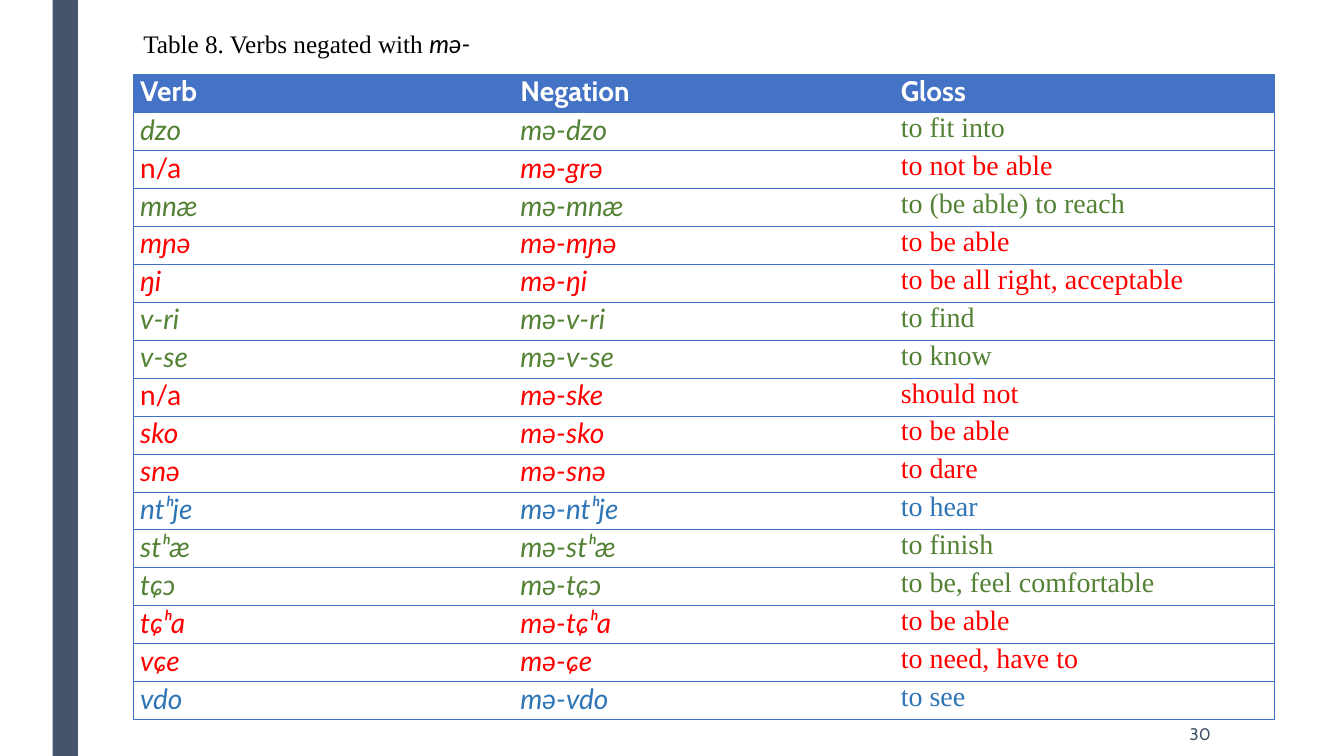
"""Builds a slide with a table of verbs and their negated forms."""
from dataclasses import dataclass

from lxml.etree import SubElement
from pptx import Presentation
from pptx.dml.color import RGBColor
from pptx.enum.shapes import MSO_SHAPE as Preset
from pptx.enum.text import MSO_ANCHOR as Anchor, MSO_AUTO_SIZE as AutoSize, PP_ALIGN as Align
from pptx.oxml.ns import qn
from pptx.slide import Slide
from pptx.table import _Cell as Cell
from pptx.text.text import _Paragraph as Paragraph
from pptx.util import Pt

WHITE = RGBColor(0xFF, 0xFF, 0xFF)
BLACK = RGBColor(0, 0, 0)
SLATE = RGBColor(0x44, 0x54, 0x6A)
HEADER_BLUE = RGBColor(0x44, 0x72, 0xC4)
GREEN = RGBColor(0x54, 0x82, 0x35)
RED = RGBColor(0xFF, 0, 0)
BLUE = RGBColor(0x2E, 0x75, 0xB6)

HEADING_FONT = "Cabin"
PHONETIC_FONT = "Lato"
GLOSS_FONT = "Times New Roman"

TABLE_LEFT, TABLE_TOP = 95.2, 53.2
COLUMN_WIDTH, ROW_HEIGHT = 271.7, 27.12
CELL_MARGIN = 4.9
BORDER_WIDTH = 0.5


@dataclass(frozen=True)
class Style:
    font: str
    size: float
    color: RGBColor
    bold: bool = False
    italic: bool = False


@dataclass(frozen=True)
class Verb:
    form: str
    negation: str
    gloss: str
    color: RGBColor


HEADINGS = ("Verb", "Negation", "Gloss")
VERBS = (
    Verb("dzo", "mə-dzo", "to fit into", GREEN),
    Verb("n/a", "mə-grə", "to not be able", RED),
    Verb("mnæ", "mə-mnæ", "to (be able) to reach", GREEN),
    Verb("mɲə", "mə-mɲə", "to be able", RED),
    Verb("ŋi", "mə-ŋi", "to be all right, acceptable", RED),
    Verb("v-ri", "mə-v-ri", "to find", GREEN),
    Verb("v-se", "mə-v-se", "to know", GREEN),
    Verb("n/a", "mə-ske", "should not", RED),
    Verb("sko", "mə-sko", "to be able", RED),
    Verb("snə", "mə-snə", "to dare", RED),
    Verb("ntʰje", "mə-ntʰje", "to hear", BLUE),
    Verb("stʰæ", "mə-stʰæ", "to finish", GREEN),
    Verb("tɕɔ", "mə-tɕɔ", "to be, feel comfortable", GREEN),
    Verb("tɕʰa", "mə-tɕʰa", "to be able", RED),
    Verb("vɕe", "mə-ɕe", "to need, have to", RED),
    Verb("vdo", "mə-vdo", "to see", BLUE),
)


def add_span(para: Paragraph, text: str, style: Style) -> None:
    span = para.add_run()
    span.text = text
    span.font.name = style.font
    span.font.size = Pt(style.size)
    span.font.bold = style.bold
    span.font.italic = style.italic
    span.font.color.rgb = style.color


def set_borders(cell: Cell, column: int) -> None:
    visible = {"L": column == 0, "R": column == len(HEADINGS) - 1, "T": True, "B": True}
    properties = cell._tc.get_or_add_tcPr()
    for side, shown in visible.items():
        line = SubElement(properties, qn(f"a:ln{side}"), w=str(Pt(BORDER_WIDTH)))
        if shown:
            fill = SubElement(line, qn("a:solidFill"))
            SubElement(fill, qn("a:srgbClr"), val=str(HEADER_BLUE))
        else:
            SubElement(line, qn("a:noFill"))


def fill_cell(cell: Cell, column: int, text: str, style: Style) -> None:
    cell.margin_left = cell.margin_right = Pt(CELL_MARGIN)
    cell.margin_top = cell.margin_bottom = Pt(0)
    set_borders(cell, column)
    para = cell.text_frame.paragraphs[0]
    para.alignment = Align.JUSTIFY
    add_span(para, text, style)


def add_verb_table(page: Slide) -> None:
    row_count, column_count = len(VERBS) + 1, len(HEADINGS)
    table = page.shapes.add_table(
        row_count, column_count, Pt(TABLE_LEFT), Pt(TABLE_TOP),
        Pt(COLUMN_WIDTH * column_count), Pt(ROW_HEIGHT * row_count)).table
    table.horz_banding = False
    for column in table.columns:
        column.width = Pt(COLUMN_WIDTH)
    for row in table.rows:
        row.height = Pt(ROW_HEIGHT)

    for column, heading in enumerate(HEADINGS):
        cell = table.cell(0, column)
        fill_cell(cell, column, heading, Style(HEADING_FONT, 20, WHITE, bold=True))
        cell.fill.solid()
        cell.fill.fore_color.rgb = HEADER_BLUE

    for row, verb in enumerate(VERBS, start=1):
        entries = (
            (verb.form, Style(PHONETIC_FONT, 20, verb.color, italic=verb.form != "n/a")),
            (verb.negation, Style(PHONETIC_FONT, 20, verb.color, italic=True)),
            (verb.gloss, Style(GLOSS_FONT, 20, verb.color)),
        )
        for column, (text, style) in enumerate(entries):
            cell = table.cell(row, column)
            fill_cell(cell, column, text, style)
            cell.fill.background()


def add_side_bar(page: Slide) -> None:
    bar = page.shapes.add_shape(Preset.RECTANGLE, Pt(37.6), Pt(0), Pt(18), Pt(540))
    bar.shadow.inherit = False
    bar.fill.solid()
    bar.fill.fore_color.rgb = SLATE
    bar.line.fill.background()


def set_caption(page: Slide) -> None:
    title = page.shapes.title
    title.left, title.top, title.width, title.height = Pt(95.2), Pt(16.8), Pt(248.5), Pt(29)
    frame = title.text_frame
    frame.word_wrap = False
    frame.auto_size = AutoSize.NONE
    frame.vertical_anchor = Anchor.TOP
    para = frame.paragraphs[0]
    para.alignment = Align.LEFT
    para.line_spacing = 1.0
    para.space_before = Pt(0)
    add_span(para, "Table 8. Verbs negated with ", Style(GLOSS_FONT, 18, BLACK))
    add_span(para, "mə-", Style(PHONETIC_FONT, 18, BLACK, italic=True))


def add_page_number(page: Slide) -> None:
    box = page.shapes.add_textbox(Pt(745.9), Pt(508.3), Pt(126), Pt(31.7))
    frame = box.text_frame
    frame.word_wrap = True
    frame.vertical_anchor = Anchor.MIDDLE
    para = frame.paragraphs[0]
    para.alignment = Align.RIGHT
    add_span(para, "30", Style(HEADING_FONT, 12, SLATE))


def main() -> None:
    deck = Presentation()
    deck.slide_width, deck.slide_height = Pt(960), Pt(540)
    page = deck.slides.add_slide(deck.slide_layouts.get_by_name("Title Only"))
    add_side_bar(page)
    add_verb_table(page)
    add_page_number(page)
    set_caption(page)
    deck.save("out.pptx")


if __name__ == "__main__":
    main()
